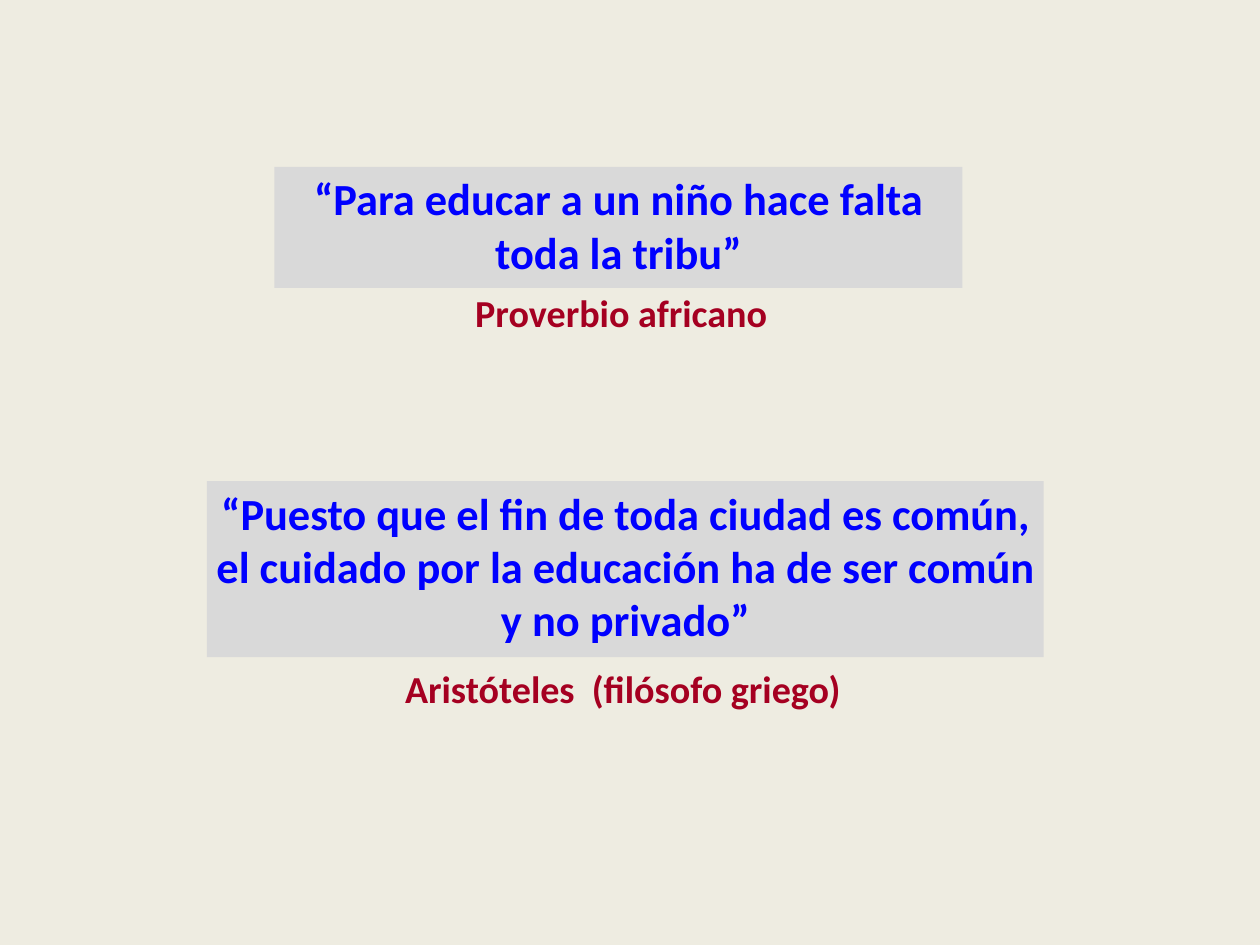
from dataclasses import dataclass

from pptx import Presentation
from pptx.dml.color import RGBColor
from pptx.enum.text import MSO_ANCHOR, PP_ALIGN
from pptx.slide import Slide
from pptx.util import Inches, Pt

CENTER = PP_ALIGN.CENTER
TOP = MSO_ANCHOR.TOP
BLANK_LAYOUT = 6
CM_PER_INCH = 2.54
SLIDE_WIDTH = Inches(28 / CM_PER_INCH)
SLIDE_HEIGHT = Inches(21 / CM_PER_INCH)
FONT = "Calibri"
COLORS = {
    "background": "EEECE1",
    "panel": "D9D9D9",
    "quote": "0000FF",
    "author": "A50021",
}


@dataclass(frozen=True)
class TextBlock:
    text: str
    left: float
    top: float
    width: float
    height: float
    color: str
    size: int
    line_spacing: float = 1.0
    fill: str | None = None


BLOCKS = [
    TextBlock("“Para educar a un niño hace falta toda la tribu”",
              2.4, 1.46, 6.02, 1.06, "quote", 28, fill="panel"),
    TextBlock("Proverbio africano",
              2.48, 2.6, 5.91, 0.43, "author", 24, line_spacing=0.7),
    TextBlock("Aristóteles  (filósofo griego)",
              2.36, 5.83, 6.18, 0.43, "author", 24, line_spacing=0.9),
    TextBlock("“Puesto que el fin de toda ciudad es común, el cuidado por la "
              "educación ha de ser común y no privado”",
              1.81, 4.21, 7.32, 1.54, "quote", 28, fill="panel"),
]


def color(name: str) -> RGBColor:
    return RGBColor.from_string(COLORS[name])


def add_block(slide: Slide, block: TextBlock) -> None:
    shape = slide.shapes.add_textbox(
        Inches(block.left), Inches(block.top),
        Inches(block.width), Inches(block.height))
    if block.fill:
        shape.fill.solid()
        shape.fill.fore_color.rgb = color(block.fill)
    frame = shape.text_frame
    frame.word_wrap = True
    frame.vertical_anchor = TOP
    frame.margin_left = frame.margin_right = Inches(0.08)
    frame.margin_top = frame.margin_bottom = Inches(0.04)
    paragraph = frame.paragraphs[0]
    paragraph.alignment = CENTER
    paragraph.line_spacing = block.line_spacing
    run = paragraph.add_run()
    run.text = block.text
    run.font.name = FONT
    run.font.size = Pt(block.size)
    run.font.bold = True
    run.font.color.rgb = color(block.color)


def main() -> None:
    presentation = Presentation()
    presentation.slide_width = SLIDE_WIDTH
    presentation.slide_height = SLIDE_HEIGHT
    slide = presentation.slides.add_slide(presentation.slide_layouts[BLANK_LAYOUT])
    slide.background.fill.solid()
    slide.background.fill.fore_color.rgb = color("background")
    for block in BLOCKS:
        add_block(slide, block)
    presentation.save("out.pptx")


if __name__ == "__main__":
    main()
